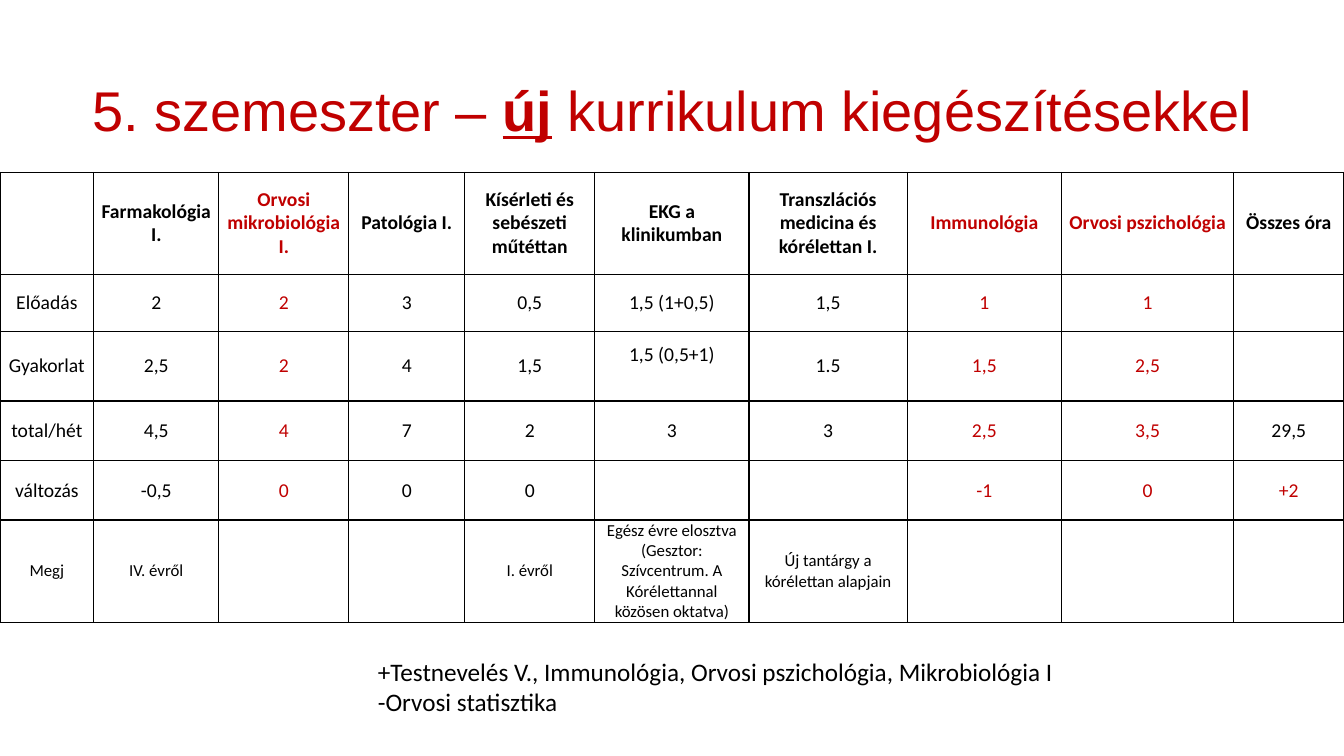
from dataclasses import dataclass
from typing import Any

from lxml.etree import SubElement
from pptx import Presentation
from pptx.dml.color import RGBColor
from pptx.enum.text import MSO_ANCHOR, MSO_AUTO_SIZE, PP_ALIGN
from pptx.oxml.ns import qn
from pptx.slide import Slide
from pptx.table import _Cell
from pptx.util import Pt


@dataclass(frozen=True)
class Theme:
    black: RGBColor = RGBColor(0x00, 0x00, 0x00)
    red: RGBColor = RGBColor(0xC0, 0x00, 0x00)
    title_font: str = "Arial"
    body_font: str = "Calibri"
    title_size: Pt = Pt(40)
    summary_size: Pt = Pt(18)
    table_size: Pt = Pt(14)
    remark_size: Pt = Pt(12)
    border: Pt = Pt(1)


@dataclass(frozen=True)
class Column:
    width: float
    texts: tuple[str, ...]
    highlighted: bool = False


THEME = Theme()
ROW_HEIGHTS = (72.7, 41, 49.7, 42.5, 42.5, 72.7)
REMARK_ROW = len(ROW_HEIGHTS) - 1
RAISED_TEXT = "1,5 (0,5+1)"
CHANGE_TOTAL = "+2"
COLUMNS = (
    Column(67, ("", "Előadás", "Gyakorlat", "total/hét", "változás", "Megj")),
    Column(89.3, ("Farmakológia I.", "2", "2,5", "4,5", "-0,5", "IV. évről")),
    Column(92.9, ("Orvosi mikrobiológia I.", "2", "2", "4", "0", ""), True),
    Column(82.8, ("Patológia I.", "3", "4", "7", "0", "")),
    Column(92.9, ("Kísérleti és sebészeti műtéttan", "0,5", "1,5", "2", "0", "I. évről")),
    Column(110.2, ("EKG a klinikumban", "1,5 (1+0,5)", RAISED_TEXT, "3", "",
                   "Egész évre elosztva\n(Gesztor: Szívcentrum. A Kórélettannal közösen oktatva)")),
    Column(113, ("Transzlációs medicina és kórélettan I.", "1,5", "1.5", "3", "",
                 "Új tantárgy a kórélettan alapjain")),
    Column(110.2, ("Immunológia", "1", "1,5", "2,5", "-1", ""), True),
    Column(123.1, ("Orvosi pszichológia", "1", "2,5", "3,5", "0", ""), True),
    Column(78.6, ("Összes óra", "", "", "29,5", CHANGE_TOTAL, "")),
)


def apply_format(target: Any, values: dict[str, Any]) -> None:
    for name, value in values.items():
        setattr(target, name, value)


def format_font(font: Any, color: RGBColor, values: dict[str, Any]) -> None:
    apply_format(font, values)
    font.color.rgb = color


def draw_borders(cell: _Cell) -> None:
    properties = cell._tc.get_or_add_tcPr()
    for side in ("a:lnL", "a:lnR", "a:lnT", "a:lnB"):
        line = SubElement(properties, qn(side), w=str(THEME.border))
        fill = SubElement(line, qn("a:solidFill"))
        SubElement(fill, qn("a:srgbClr"), val=str(THEME.black))


def add_title(slide: Slide) -> None:
    title = slide.shapes.title
    apply_format(title, {"left": Pt(0), "top": Pt(28.8), "width": Pt(960), "height": Pt(104.4)})
    title.text_frame.vertical_anchor = MSO_ANCHOR.MIDDLE
    paragraph = title.text_frame.paragraphs[0]
    apply_format(paragraph, {"alignment": PP_ALIGN.CENTER, "line_spacing": 0.9})
    for text, emphasized in (("5. szemeszter – ", False), ("új", True),
                             (" kurrikulum kiegészítésekkel", False)):
        run = paragraph.add_run()
        run.text = text
        format_font(run.font, THEME.red, {
            "name": THEME.title_font, "size": THEME.title_size,
            "bold": emphasized, "underline": emphasized})


def fill_cell(cell: _Cell, text: str, row: int, highlighted: bool) -> None:
    apply_format(cell, {
        "text": text, "vertical_anchor": MSO_ANCHOR.MIDDLE,
        "margin_left": Pt(5), "margin_right": Pt(5), "margin_top": Pt(0),
        "margin_bottom": Pt(17) if text == RAISED_TEXT else Pt(0)})
    for paragraph in cell.text_frame.paragraphs:
        paragraph.alignment = PP_ALIGN.CENTER
        format_font(paragraph.font, THEME.red if highlighted else THEME.black, {
            "name": THEME.body_font, "bold": row == 0,
            "size": THEME.remark_size if row == REMARK_ROW else THEME.table_size})
    draw_borders(cell)
    cell.fill.background()


def add_curriculum(slide: Slide) -> None:
    table = slide.shapes.add_table(
        len(ROW_HEIGHTS), len(COLUMNS), Pt(0), Pt(123.1), Pt(960), Pt(sum(ROW_HEIGHTS))).table
    apply_format(table, {"first_row": False, "horz_banding": False})
    for row, height in enumerate(ROW_HEIGHTS):
        table.rows[row].height = Pt(height)
    for index, column in enumerate(COLUMNS):
        table.columns[index].width = Pt(column.width)
        for row, text in enumerate(column.texts):
            highlighted = column.highlighted or text == CHANGE_TOTAL
            fill_cell(table.cell(row, index), text, row, highlighted)


def add_summary(slide: Slide) -> None:
    frame = slide.shapes.add_textbox(Pt(262.8), Pt(465.1), Pt(576.7), Pt(51.1)).text_frame
    apply_format(frame, {
        "word_wrap": True, "auto_size": MSO_AUTO_SIZE.SHAPE_TO_FIT_TEXT,
        "text": "+Testnevelés V., Immunológia, Orvosi pszichológia, Mikrobiológia I\n"
                "-Orvosi statisztika"})
    for paragraph in frame.paragraphs:
        format_font(paragraph.font, THEME.black, {
            "name": THEME.body_font, "size": THEME.summary_size})


def main() -> None:
    presentation = Presentation()
    apply_format(presentation, {"slide_width": Pt(960), "slide_height": Pt(540)})
    slide = presentation.slides.add_slide(presentation.slide_layouts.get_by_name("Title Only"))
    add_title(slide)
    add_curriculum(slide)
    add_summary(slide)
    presentation.save("out.pptx")


if __name__ == "__main__":
    main()
